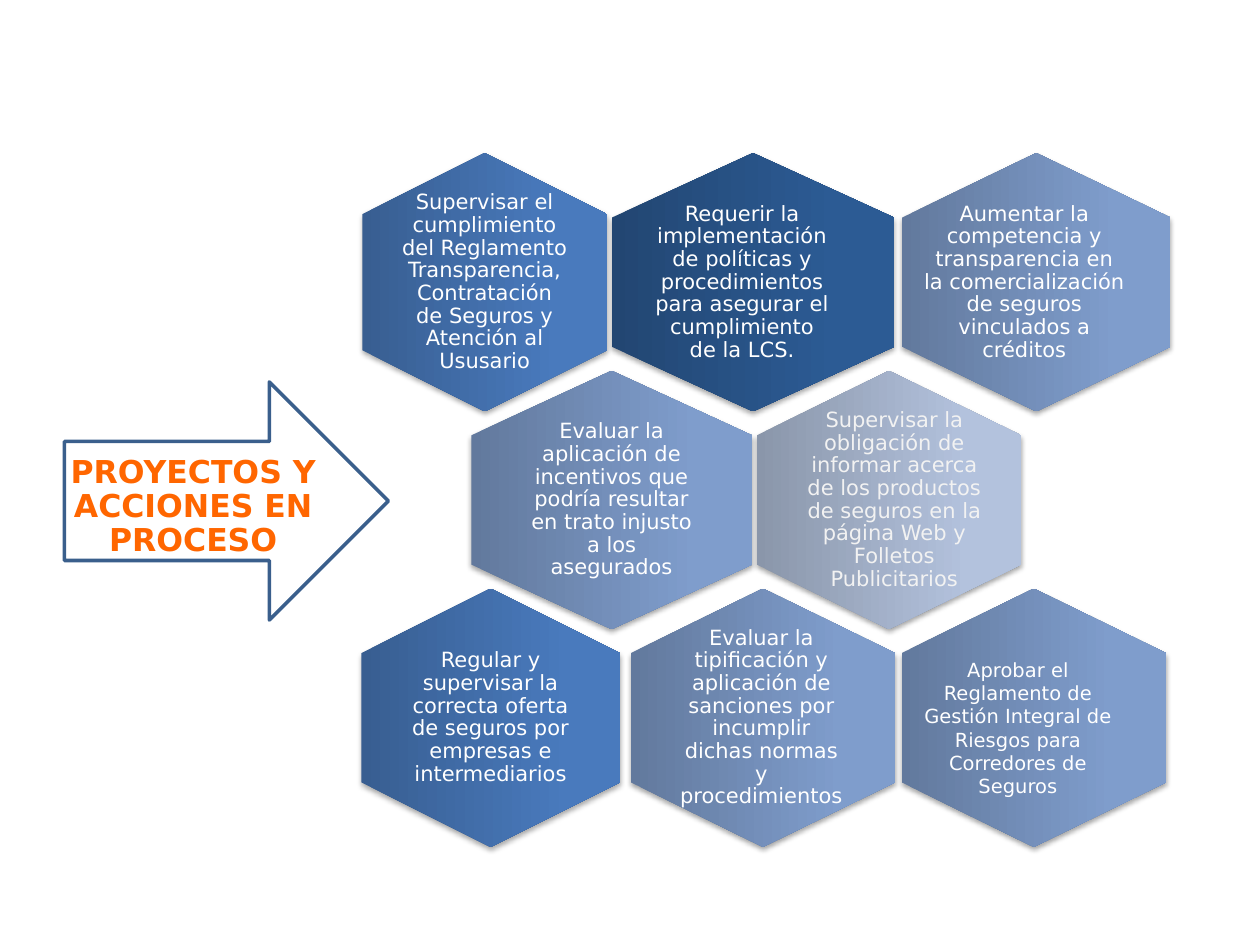
from dataclasses import dataclass

from lxml import etree
from pptx import Presentation
from pptx.dml.color import RGBColor
from pptx.enum.shapes import MSO_SHAPE
from pptx.enum.text import MSO_ANCHOR, MSO_AUTO_SIZE, PP_ALIGN
from pptx.slide import Slide
from pptx.util import Cm, Pt

HEXAGON = MSO_SHAPE.HEXAGON
RIGHT_ARROW = MSO_SHAPE.RIGHT_ARROW
CENTER = PP_ALIGN.CENTER
TOP, MIDDLE = MSO_ANCHOR.TOP, MSO_ANCHOR.MIDDLE
NO_AUTOFIT = MSO_AUTO_SIZE.NONE

WHITE = RGBColor(0xFF, 0xFF, 0xFF)
PALE_GREY = RGBColor(0xF2, 0xF2, 0xF2)
ORANGE = RGBColor(0xFF, 0x66, 0x00)
ARROW_BLUE = RGBColor(0x3A, 0x5F, 0x8C)

# Gradient colours at 0, 80 and 100 %
NAVY = RGBColor(0x22, 0x46, 0x72), RGBColor(0x2C, 0x5B, 0x94), RGBColor(0x2A, 0x5B, 0x96)
BLUE = RGBColor(0x38, 0x5E, 0x91), RGBColor(0x49, 0x7A, 0xBD), RGBColor(0x47, 0x7A, 0xC0)
SOFT = RGBColor(0x62, 0x79, 0x9D), RGBColor(0x7F, 0x9D, 0xCC), RGBColor(0x7E, 0x9D, 0xCE)
PALE = RGBColor(0x8A, 0x96, 0xAA), RGBColor(0xB3, 0xC2, 0xDD), RGBColor(0xB3, 0xC3, 0xDF)
STOPS = 0, 80, 100

A_NS = "http://schemas.openxmlformats.org/drawingml/2006/main"
HEX_HEIGHT = 5.21
TEXT_HEIGHT = 3.49
TOP_ROW, MIDDLE_ROW, BOTTOM_ROW = (5.69 + 4.39 * row for row in range(3))


def write_text(frame, text, *, size, color, bold=False, spacing=0.9,
               inset=0.0, anchor=MIDDLE, font_name="DejaVu Sans"):
    frame.word_wrap = True
    frame.auto_size = NO_AUTOFIT
    frame.vertical_anchor = anchor
    frame.margin_left = frame.margin_right = Cm(inset)
    frame.margin_top = frame.margin_bottom = Cm(inset)
    frame.text = text
    paragraph = frame.paragraphs[0]
    paragraph.alignment = CENTER
    paragraph.line_spacing = spacing
    font = paragraph.runs[0].font
    font.name, font.size, font.bold = font_name, Pt(size), bold
    font.color.rgb = color


def gradient_xml(colors):
    stops = "".join(
        f'<a:gs pos="{stop * 1000}"><a:srgbClr val="{color}"/></a:gs>'
        for stop, color in zip(STOPS, colors))
    return etree.fromstring(
        f'<a:gradFill xmlns:a="{A_NS}" rotWithShape="1"><a:gsLst>{stops}</a:gsLst>'
        '<a:lin ang="16200000" scaled="0"/></a:gradFill>')


def shadow_xml():
    return etree.fromstring(
        f'<a:effectLst xmlns:a="{A_NS}"><a:outerShdw blurRad="{Pt(3.1)}" '
        f'dist="{Pt(1.8)}" dir="5400000" rotWithShape="0"><a:srgbClr val="000000">'
        '<a:alpha val="35000"/></a:srgbClr></a:outerShdw></a:effectLst>')


@dataclass
class ProjectSlide:
    slide: Slide
    text_size: float = 12

    def heading(self, text, left, top, width, height):
        title = self.slide.shapes.title
        title.left, title.top = Cm(left), Cm(top)
        title.width, title.height = Cm(width), Cm(height)
        write_text(title.text_frame, text, size=18, color=ORANGE, bold=True, inset=0.2)

    def arrow(self, left, top, width, height):
        arrow = self.slide.shapes.add_shape(
            RIGHT_ARROW, Cm(left), Cm(top), Cm(width), Cm(height))
        arrow.shadow.inherit = False
        arrow.fill.background()
        arrow.line.color.rgb = ARROW_BLUE
        arrow.line.width = Pt(2)

    def hexagon(self, center_x, center_y, width, colors):
        """Draw a hexagon turned to stand on its point; width is as seen."""
        hexagon = self.slide.shapes.add_shape(
            HEXAGON, Cm(center_x - HEX_HEIGHT / 2), Cm(center_y - width / 2),
            Cm(HEX_HEIGHT), Cm(width))
        hexagon.rotation = 90
        hexagon.adjustments[0] = 0.25
        hexagon.line.fill.background()
        outline = hexagon.line._get_or_add_ln()
        outline.addprevious(gradient_xml(colors))
        outline.addnext(shadow_xml())

    def label(self, text, center_x, center_y, width, height=TEXT_HEIGHT,
              color=WHITE, **text_format):
        box = self.slide.shapes.add_textbox(
            Cm(center_x - width / 2), Cm(center_y - height / 2), Cm(width), Cm(height))
        write_text(box.text_frame, text, color=color,
                   **{"size": self.text_size, **text_format})


# Row, hexagon (centre, width, colours), label (centre, width), label format, text
PROJECTS = [
    (TOP_ROW, (15.18, 5.69, NAVY), (14.96, 3.81), {"inset": 0.13},
     "Requerir la implementación de políticas y procedimientos para asegurar el "
     "cumplimiento de la LCS."),
    (TOP_ROW, (9.77, 4.93, BLUE), (9.77, 3.33), {},
     "Supervisar el cumplimiento del Reglamento Transparencia, Contratación de "
     "Seguros y Atención al Ususario"),
    (MIDDLE_ROW, (12.33, 5.66, SOFT), (12.33, 3.78), {"inset": 0.13},
     "Evaluar la aplicación de incentivos que podría resultar en trato injusto a "
     "los asegurados"),
    (MIDDLE_ROW, (17.92, 5.33, PALE), (18.03, 3.56), {"color": PALE_GREY},
     "Supervisar la obligación de informar acerca de los productos de seguros en "
     "la página Web y Folletos Publicitarios"),
    (BOTTOM_ROW, (15.38, 5.33, SOFT), (15.35, 3.58), {"inset": 0.13},
     "Evaluar la tipificación y aplicación de sanciones por incumplir dichas "
     "normas y procedimientos"),
    (BOTTOM_ROW, (9.89, 5.21, BLUE), (9.89, 3.48), {},
     "Regular y supervisar la correcta oferta de seguros por empresas e "
     "intermediarios"),
    (TOP_ROW, (20.89, 5.41, SOFT), (20.65, 4.32), {"inset": 0.13},
     "Aumentar la competencia y transparencia en la comercialización de seguros "
     "vinculados a créditos"),
    (BOTTOM_ROW, (20.84, 5.33, SOFT), (20.52, 4.98),
     {"height": 2.92, "size": 11.1, "spacing": 1.0, "inset": 0.25, "anchor": TOP},
     "Aprobar el Reglamento de Gestión Integral de Riesgos para Corredores de "
     "Seguros"),
]


def main():
    presentation = Presentation()
    presentation.slide_width, presentation.slide_height = Cm(25.4), Cm(19.05)
    title_only = presentation.slide_layouts[5]
    page = ProjectSlide(presentation.slides.add_slide(title_only))

    page.heading("PROYECTOS Y ACCIONES EN PROCESO", 1.09, 8.66, 5.61, 3.12)
    page.arrow(1.3, 7.7, 6.53, 4.8)
    for row, (hex_x, hex_width, colors), (label_x, label_width), style, text in PROJECTS:
        page.hexagon(hex_x, row, hex_width, colors)
        page.label(text, label_x, row, label_width, **style)

    presentation.save("out.pptx")


if __name__ == "__main__":
    main()
